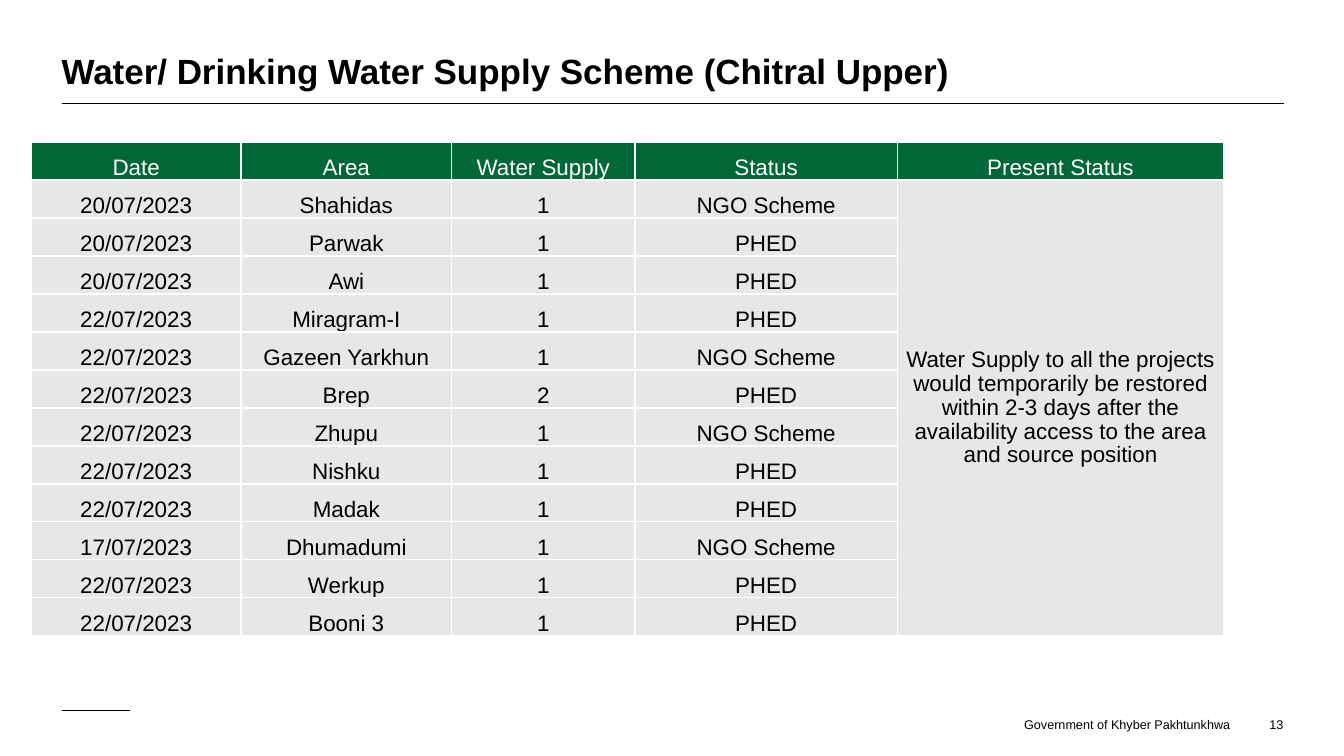
import pptx
import pptx.util
import pptx.dml.color
import pptx.enum.shapes
import pptx.enum.text
import pptx.oxml
import pptx.oxml.ns

Align = pptx.enum.text.PP_ALIGN
Anchor = pptx.enum.text.MSO_ANCHOR
AutoSize = pptx.enum.text.MSO_AUTO_SIZE

THEME = {
    "font": "Arial",
    "ink": "000000", "paper": "FFFFFF", "header": "006837", "body": "E7E7E7",
    "title_size": 25, "table_size": 16, "footer_size": 9,
    "rule_width": 0.5, "border_width": 1,
}

deck = pptx.Presentation()
deck.slide_width = pptx.util.Inches(13.33)
deck.slide_height = pptx.util.Inches(7.5)
slide = deck.slides.add_slide(deck.slide_layouts[5])


def place(*percents):
    """Turn alternating x and y percentages of the slide into lengths."""
    sides = (deck.slide_width, deck.slide_height)
    return [round(sides[i % 2] * share / 100) for i, share in enumerate(percents)]


def write(holder, text, size, color, align, anchor, bold=False):
    """Fill a shape or table cell with one formatted paragraph without insets."""
    frame = holder.text_frame
    frame.word_wrap = True
    layout = {"margin_left": 0, "margin_right": 0, "margin_top": 0,
              "margin_bottom": 0, "vertical_anchor": anchor}
    target = frame if hasattr(holder, "shape_id") else holder
    for name, value in layout.items():
        setattr(target, name, value)
    paragraph = frame.paragraphs[0]
    paragraph.text = text
    paragraph.alignment = align
    letters = {"name": THEME["font"], "size": pptx.util.Pt(size), "bold": bold}
    for name, value in letters.items():
        setattr(paragraph.font, name, value)
    paragraph.font.color.rgb = pptx.dml.color.RGBColor.from_string(color)
    return frame


# Footer and page number
footer = slide.shapes.add_textbox(*place(76.14, 94.8, 15.45, 2))
footer_frame = write(footer, "Government of Khyber Pakhtunkhwa", THEME["footer_size"],
                     THEME["ink"], Align.CENTER, Anchor.MIDDLE)
footer_frame.word_wrap = False
page_number = slide.shapes.add_textbox(*place(92.8, 94.8, 2.7, 2))
page_frame = write(page_number, "13", THEME["footer_size"],
                   THEME["ink"], Align.RIGHT, Anchor.BOTTOM)
for frame in (footer_frame, page_frame):
    frame.auto_size = AutoSize.SHAPE_TO_FIT_TEXT

# Rules under the title and above the footer
for right, height in ((9.68, 94), (95.5, 13.73)):
    rule = slide.shapes.add_connector(
        pptx.enum.shapes.MSO_CONNECTOR.STRAIGHT, *place(4.58, height, right, height))
    rule.line.width = pptx.util.Pt(THEME["rule_width"])
    rule.line.color.rgb = pptx.dml.color.RGBColor.from_string(THEME["ink"])
    rule._element.spPr.append(pptx.oxml.parse_xml(
        f'<a:effectLst {pptx.oxml.ns.nsdecls("a")}/>'))

# Title
title = slide.shapes.title
title.left, title.top, title.width, title.height = place(4.58, 1.47, 83.35, 10.67)
title_frame = write(title, "Water/ Drinking Water Supply Scheme (Chitral Upper)",
                    THEME["title_size"], THEME["ink"], Align.LEFT, Anchor.BOTTOM, True)
title_frame.auto_size = AutoSize.NONE

# Water supply schemes
headings = ["Date", "Area", "Water Supply", "Status", "Present Status"]
schemes = [
    ("20/07/2023", "Shahidas", "1", "NGO Scheme"),
    ("20/07/2023", "Parwak", "1", "PHED"),
    ("20/07/2023", "Awi", "1", "PHED"),
    ("22/07/2023", "Miragram-I", "1", "PHED"),
    ("22/07/2023", "Gazeen Yarkhun", "1", "NGO Scheme"),
    ("22/07/2023", "Brep", "2", "PHED"),
    ("22/07/2023", "Zhupu", "1", "NGO Scheme"),
    ("22/07/2023", "Nishku", "1", "PHED"),
    ("22/07/2023", "Madak", "1", "PHED"),
    ("17/07/2023", "Dhumadumi", "1", "NGO Scheme"),
    ("22/07/2023", "Werkup", "1", "PHED"),
    ("22/07/2023", "Booni 3", "1", "PHED"),
]
present_status = ("Water Supply to all the projects would temporarily be restored "
                  "within 2-3 days after the availability access to the area "
                  "and source position")
column_shares = [15.6, 15.68, 13.65, 19.5, 24.31]

rows = [headings, *schemes]
schedule = slide.shapes.add_table(
    len(rows), len(headings), *place(2.33, 18.8, sum(column_shares), 65.33)).table
schedule.horz_banding = False
for column, share in zip(schedule.columns, column_shares):
    column.width = place(share)[0]

# Cell borders and fills
for position, cell in enumerate(schedule.iter_cells()):
    properties = cell._tc.get_or_add_tcPr()
    for side in "LRTB":
        properties.append(pptx.oxml.parse_xml(
            f'<a:ln{side} {pptx.oxml.ns.nsdecls("a")} '
            f'w="{pptx.util.Pt(THEME["border_width"])}"><a:solidFill>'
            f'<a:srgbClr val="{THEME["paper"]}"/></a:solidFill></a:ln{side}>'))
    shade = THEME["header"] if position < len(headings) else THEME["body"]
    cell.fill.solid()
    cell.fill.fore_color.rgb = pptx.dml.color.RGBColor.from_string(shade)

# Cell text
for r, row in enumerate(rows):
    for c, text in enumerate(row):
        write(schedule.cell(r, c), text, THEME["table_size"],
              THEME["ink"] if r else THEME["paper"], Align.CENTER, Anchor.BOTTOM)

# Shared present status beside all schemes
outlook = schedule.cell(1, 4)
outlook.merge(schedule.cell(len(schemes), 4))
outlook_frame = write(outlook, present_status, THEME["table_size"],
                      THEME["ink"], Align.CENTER, Anchor.MIDDLE)
outlook_frame.paragraphs[0].line_spacing = 0.96

deck.save("out.pptx")
